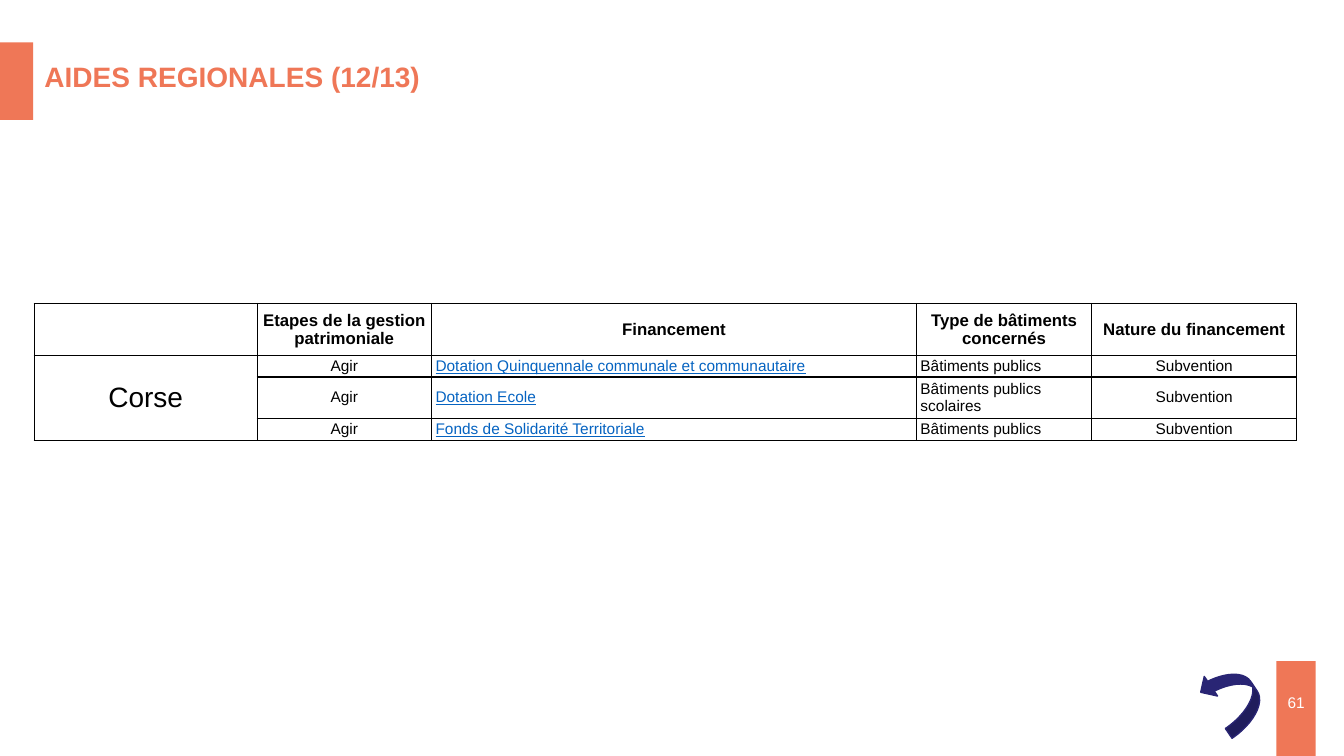
from lxml import etree
from pptx import Presentation
from pptx.dml.color import RGBColor
from pptx.enum.shapes import MSO_SHAPE as Shape
from pptx.enum.text import MSO_ANCHOR as Anchor, PP_ALIGN as Align
from pptx.oxml.ns import qn
from pptx.util import Inches, Pt

COLORS = {"accent": "EF7757", "arrow": "292574", "link": "0563C1",
          "text": "000000", "paper": "FFFFFF"}
FONT = "Arial"
COLUMN_WIDTHS = [2.21, 1.73, 4.81, 1.74, 2.03]
ROW_HEIGHTS = [0.52, 0.2, 0.41, 0.22]
HEADERS = ["", "Etapes de la gestion patrimoniale", "Financement",
           "Type de bâtiments concernés", "Nature du financement"]
AIDS = [
    ["Corse", "Agir", "Dotation Quinquennale communale et communautaire",
     "Bâtiments publics", "Subvention"],
    ["", "Agir", "Dotation Ecole", "Bâtiments publics scolaires", "Subvention"],
    ["", "Agir", "Fonds de Solidarité Territoriale", "Bâtiments publics", "Subvention"],
]
REGION, FUNDING, BUILDINGS = 0, 2, 3


def color(name):
    return RGBColor.from_string(COLORS[name])


def apply(target, **values):
    for name, value in values.items():
        setattr(target, name, value)


def write(frame, text, size, color_name="text", align=Align.LEFT, **font_values):
    paragraph = frame.paragraphs[0]
    paragraph.alignment = align
    if not text:
        etree.SubElement(paragraph._p, qn("a:endParaRPr"), sz=str(size * 100))
        return
    run = paragraph.add_run()
    run.text = text
    apply(run.font, name=FONT, size=Pt(size), **font_values)
    run.font.color.rgb = color(color_name)


def add_filled(slide, kind, box, color_name):
    shape = slide.shapes.add_shape(kind, *map(Inches, box))
    shape.shadow.inherit = False
    shape.fill.solid()
    shape.fill.fore_color.rgb = color(color_name)
    shape.line.fill.background()
    return shape


def add_header(slide, left, top, width, height):
    tab_width = 0.33
    add_filled(slide, Shape.RECTANGLE, (left, top, tab_width, height), "accent")
    title = slide.shapes.title
    apply(title, left=Inches(left + tab_width + 0.01), top=Inches(top + 0.12),
          width=Inches(width), height=Inches(0.44))
    apply(title.text_frame, word_wrap=True, vertical_anchor=Anchor.MIDDLE)
    write(title.text_frame, "AIDES REGIONALES (12/13)", 20, "accent", bold=True)


def add_borders(cell):
    properties = cell._tc.get_or_add_tcPr()
    for position, side in enumerate(("lnL", "lnR", "lnT", "lnB")):
        line = etree.Element(qn(f"a:{side}"), w=str(Pt(1)))
        fill = etree.SubElement(line, qn("a:solidFill"))
        etree.SubElement(fill, qn("a:srgbClr"), val=COLORS["text"])
        properties.insert(position, line)


def text_format(row, column):
    """Return the text values for a cell by its role in the table."""
    if row == 0:
        return {"size": 12, "align": Align.CENTER, "bold": True}
    if column == REGION:
        return {"size": 20 if row == 1 else 11, "align": Align.CENTER}
    if column == FUNDING:
        return {"size": 11, "color_name": "link", "underline": True}
    return {"size": 11, "align": Align.LEFT if column == BUILDINGS else Align.CENTER}


def add_aid_table(slide, left, top):
    rows = [HEADERS] + AIDS
    box = (left, top, sum(COLUMN_WIDTHS), sum(ROW_HEIGHTS))
    table = slide.shapes.add_table(len(rows), len(HEADERS), *map(Inches, box)).table
    apply(table, first_row=False, horz_banding=False)
    for column, width in zip(table.columns, COLUMN_WIDTHS):
        column.width = Inches(width)
    for row, height in zip(table.rows, ROW_HEIGHTS):
        row.height = Inches(height)
    for row, texts in enumerate(rows):
        for column, text in enumerate(texts):
            cell = table.cell(row, column)
            apply(cell, vertical_anchor=Anchor.MIDDLE,
                  margin_left=Inches(0.04), margin_right=Inches(0.04),
                  margin_top=Inches(0.02), margin_bottom=Inches(0.02))
            cell.fill.solid()
            cell.fill.fore_color.rgb = color("paper")
            add_borders(cell)
            write(cell.text_frame, text, **text_format(row, column))
    table.cell(1, REGION).merge(table.cell(len(AIDS), REGION))


def add_page_corner(slide, left, top, width, height):
    add_filled(slide, Shape.RECTANGLE, (left, top, width, height), "accent")
    number_width = 0.63
    number = slide.shapes.add_textbox(
        Inches(left + (width - number_width) / 2), Inches(top + 0.21),
        Inches(number_width), Inches(0.4))
    margin = Inches(0.08)
    apply(number.text_frame, word_wrap=False, vertical_anchor=Anchor.MIDDLE,
          margin_left=margin, margin_right=margin,
          margin_top=margin, margin_bottom=margin)
    write(number.text_frame, "61", 11, "paper", Align.CENTER)

    arrow = add_filled(slide, Shape.CURVED_RIGHT_ARROW,
                       (left - 0.67, top + 0.02, 0.47, 0.67), "arrow")
    arrow.rotation = 145.7
    arrow.line.color.rgb = color("arrow")
    arrow.line.width = Pt(1)


def main():
    presentation = Presentation()
    apply(presentation, slide_width=Inches(13.33), slide_height=Inches(7.5))
    slide = presentation.slides.add_slide(presentation.slide_layouts[5])
    add_header(slide, 0, 0.42, 10.53, 0.77)
    add_aid_table(slide, 0.34, 3.01)
    add_page_corner(slide, 12.66, 6.56, 0.39, 0.94)
    presentation.save("out.pptx")


if __name__ == "__main__":
    main()
